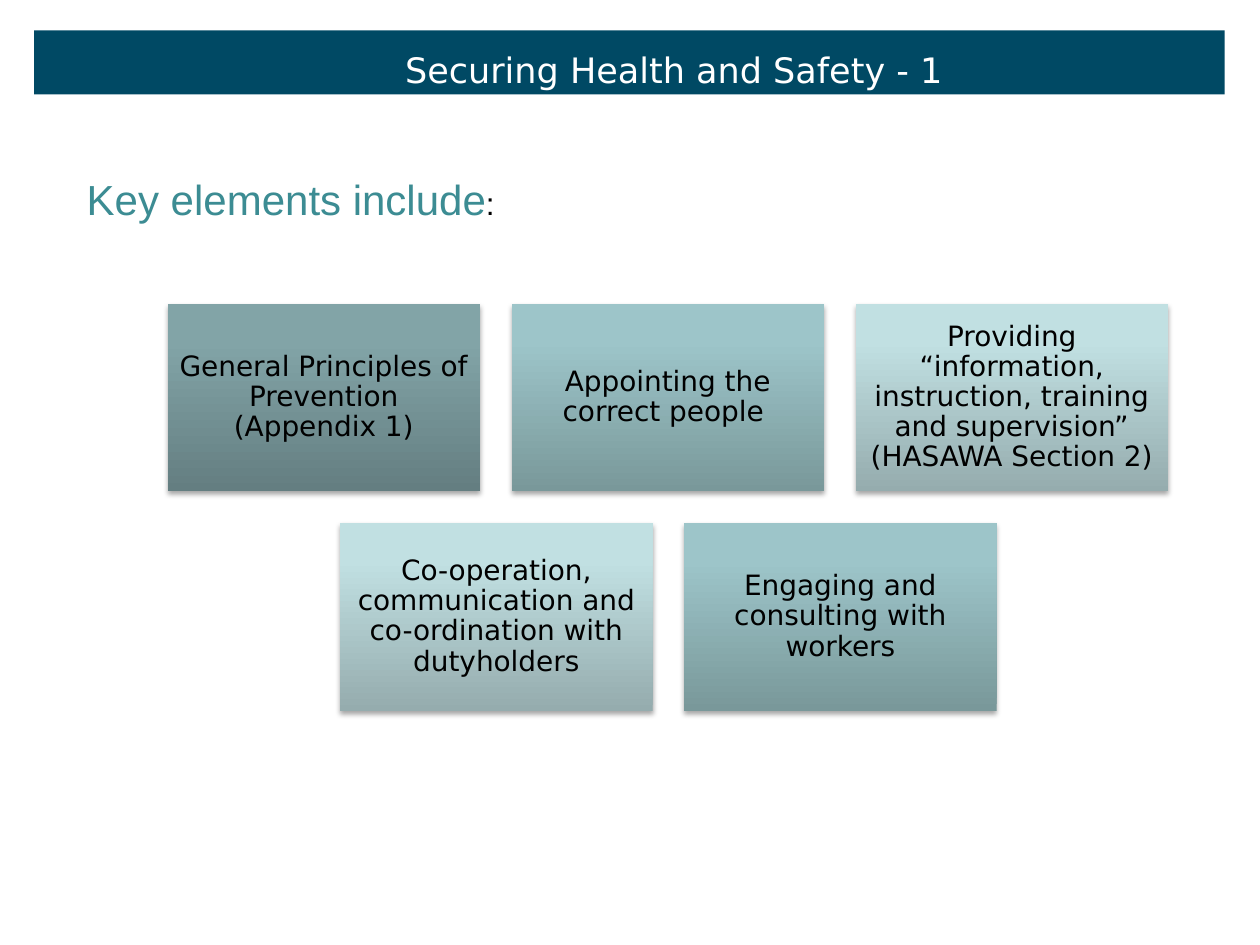
"""Build the slide on the key elements of securing health and safety."""
from copy import deepcopy

from pptx import Presentation
from pptx.dml.color import RGBColor
from pptx.enum.shapes import MSO_SHAPE
from pptx.enum.text import MSO_ANCHOR, MSO_AUTO_SIZE, PP_ALIGN
from pptx.oxml import parse_xml
from pptx.oxml.ns import nsdecls, qn
from pptx.util import Inches, Pt

TILE_WIDTH, TILE_HEIGHT = 2.48, 1.49
TILE_STEP = 2.73
DARK = ("647E81", "82A4A7", "82A6A9")
MEDIUM = ("79989A", "9DC5C9", "9DC7CA")
LIGHT = ("95ACAE", "C1E0E2", "C1E1E4")
TILE_ROWS = [
    (1.33, 2.41, [
        ("General Principles of Prevention (Appendix 1)", DARK),
        ("Appointing the correct people ", MEDIUM),
        ("Providing “information, instruction, training and supervision” "
         "(HASAWA Section 2)", LIGHT),
    ]),
    (2.7, 4.15, [
        ("Co-operation, communication and co-ordination with dutyholders", LIGHT),
        ("Engaging and consulting with workers", MEDIUM),
    ]),
]


def color(value):
    """Turn a hex string into a colour."""
    return RGBColor.from_string(value)


def place(shape, left, top, width, height):
    """Move and size a shape, in inches."""
    shape.left, shape.top = Inches(left), Inches(top)
    shape.width, shape.height = Inches(width), Inches(height)


def add_run(para, text, size, font, hex_color):
    """Add one formatted run to a paragraph."""
    span = para.add_run()
    span.text = text
    span.font.size = Pt(size)
    span.font.name = font
    span.font.color.rgb = color(hex_color)


def add_rectangle(slide, left, top, width, height):
    """Add a rectangle without outline or inherited shadow."""
    box = slide.shapes.add_shape(
        MSO_SHAPE.RECTANGLE, Inches(left), Inches(top), Inches(width), Inches(height))
    box.line.fill.background()
    box.shadow.inherit = False
    return box


def add_title(slide, text):
    """Set the title in front of its coloured bar."""
    bar = add_rectangle(slide, 0.27, 0.24, 9.45, 0.51)
    bar.fill.solid()
    bar.fill.fore_color.rgb = color("004964")
    title = slide.shapes.title
    title.element.addprevious(bar.element)
    place(title, 0.94, 0.15, 8.82, 0.61)
    frame = title.text_frame
    frame.vertical_anchor = MSO_ANCHOR.BOTTOM
    frame.auto_size = MSO_AUTO_SIZE.NONE
    para = frame.paragraphs[0]
    para.alignment = PP_ALIGN.CENTER
    para.line_spacing = 0.75
    add_run(para, text, 20, "DejaVu Sans", "FFFFFF")


def add_lead(slide):
    """Add the line that introduces the tiles."""
    box = slide.shapes.add_textbox(
        Inches(0.59), Inches(1.33), Inches(3.47), Inches(0.5))
    box.text_frame.word_wrap = False
    para = box.text_frame.paragraphs[0]
    add_run(para, "Key elements include", 24, "Arial", "3C8C93")
    add_run(para, ":", 18, "Arial", "000000")


def set_gradient(shape, colors):
    """Fill a shape with a three-stop gradient rising from the bottom."""
    shape.fill.gradient()
    shape.fill.gradient_angle = 90
    stop_list = shape.element.spPr.find(".//" + qn("a:gsLst"))
    stop_list.append(deepcopy(stop_list[-1]))
    for stop, position, value in zip(shape.fill.gradient_stops, (0, 0.8, 1), colors):
        stop.position = position
        stop.color.rgb = color(value)


def set_shadow(shape):
    """Give a shape a soft shadow below it."""
    effects = shape.element.spPr.find(qn("a:effectLst"))
    effects.append(parse_xml(
        f'<a:outerShdw {nsdecls("a")} blurRad="{Pt(3.1)}" dist="{Pt(1.8)}" '
        'dir="5400000" rotWithShape="0"><a:srgbClr val="000000">'
        '<a:alpha val="35000"/></a:srgbClr></a:outerShdw>'))


def add_tile(slide, left, top, text, colors):
    """Add one shaded tile with centred text."""
    tile = add_rectangle(slide, left, top, TILE_WIDTH, TILE_HEIGHT)
    set_gradient(tile, colors)
    set_shadow(tile)
    frame = tile.text_frame
    frame.word_wrap = True
    frame.vertical_anchor = MSO_ANCHOR.MIDDLE
    frame.margin_left = frame.margin_right = Inches(0.07)
    frame.margin_top = frame.margin_bottom = Inches(0.07)
    para = frame.paragraphs[0]
    para.alignment = PP_ALIGN.CENTER
    para.line_spacing = 0.9
    add_run(para, text, 16, "DejaVu Sans", "000000")


def main():
    """Build and save the deck."""
    deck = Presentation()
    deck.slide_width, deck.slide_height = Inches(10), Inches(7.5)
    page = deck.slides.add_slide(deck.slide_layouts.get_by_name("Title Only"))
    add_title(page, "Securing Health and Safety - 1")
    for left, top, tiles in TILE_ROWS:
        for column, (text, colors) in enumerate(tiles):
            add_tile(page, left + column * TILE_STEP, top, text, colors)
    add_lead(page)
    deck.save("out.pptx")


if __name__ == "__main__":
    main()
